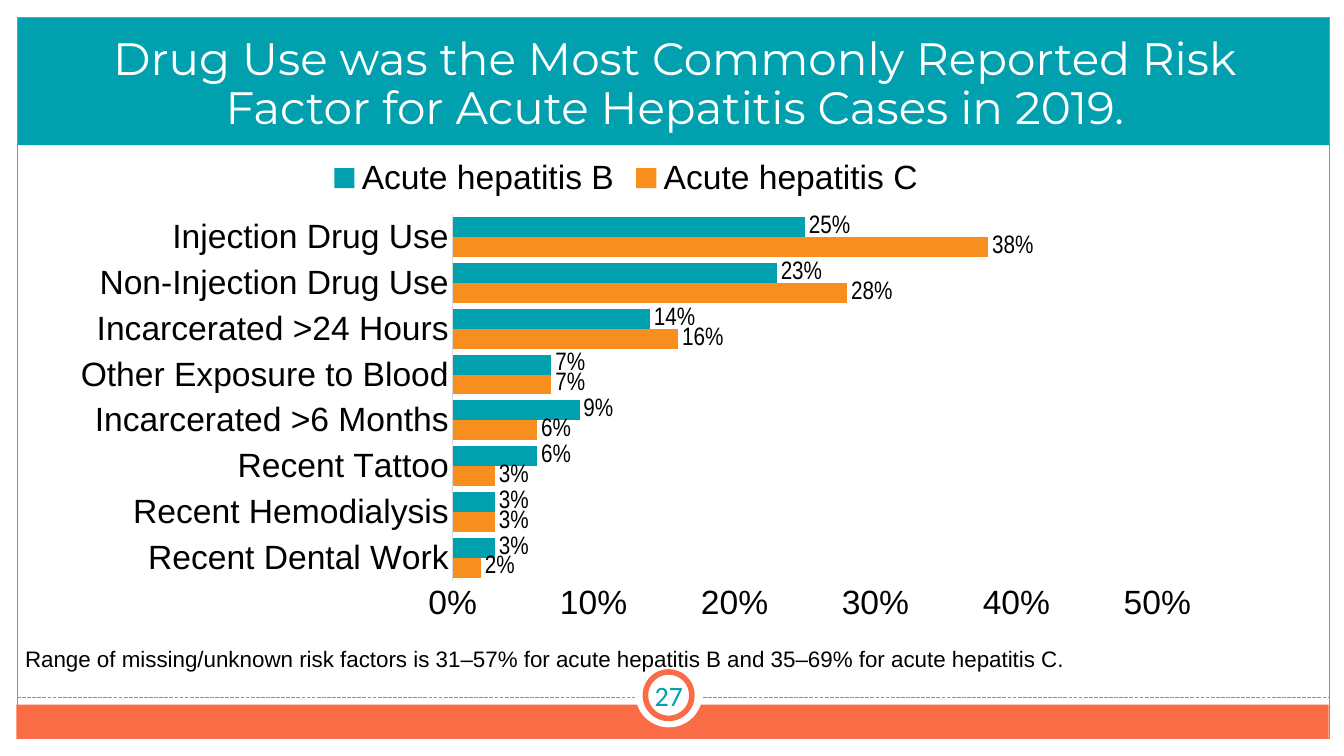
import pptx
import pptx.chart.data
import pptx.dml.color
import pptx.enum.chart
import pptx.enum.dml
import pptx.enum.shapes
import pptx.enum.text
import pptx.oxml
import pptx.oxml.ns
import pptx.util
from lxml import etree

Pt = pptx.util.Pt
SHAPE = pptx.enum.shapes.MSO_SHAPE
ANCHOR = pptx.enum.text.MSO_ANCHOR
ALIGN = pptx.enum.text.PP_ALIGN
CHART = pptx.enum.chart
TEAL, CORAL, ORANGE = "00A0AF", "F96C45", "F78E1E"
WHITE, BLACK, GREY = "FFFFFF", "000000", "D9D9D9"


def rgb(value):
    return pptx.dml.color.RGBColor.from_string(value)


def apply(target, values):
    for name, value in values.items():
        setattr(target, name, value)


class Deck:
    """Holds the presentation, its text styles and the current slide."""

    styles = {
        "title": ({"name": "Montserrat", "size": Pt(32.4)}, WHITE),
        "number": ({"name": "Calibri", "size": Pt(20)}, TEAL),
        "note": ({"name": "Arial", "size": Pt(16)}, BLACK),
        "chart": ({"name": "Calibri", "size": Pt(10)}, BLACK),
        "axis": ({"name": "Arial", "size": Pt(24)}, BLACK),
        "value": ({"name": "Arial Narrow", "size": Pt(18)}, BLACK),
    }

    def __init__(self, width, height):
        self.prs = pptx.Presentation()
        apply(self.prs, {"slide_width": Pt(width), "slide_height": Pt(height)})
        self.s = self.prs.slides.add_slide(self.prs.slide_layouts[5])

    def font(self, font, style):
        values, color = self.styles[style]
        apply(font, values)
        font.color.rgb = rgb(color)

    def shape(self, kind, box, fill=None, line=None, width=0.75):
        sp = self.s.shapes.add_shape(kind, *map(Pt, box))
        sp.shadow.inherit = False
        if fill:
            sp.fill.solid()
            sp.fill.fore_color.rgb = rgb(fill)
        else:
            sp.fill.background()
        if line:
            sp.line.color.rgb = rgb(line)
            sp.line.width = Pt(width)
        else:
            sp.line.fill.background()

    def dashed_line(self, x1, x2, y, color):
        ln = self.s.shapes.add_connector(
            pptx.enum.shapes.MSO_CONNECTOR.STRAIGHT, Pt(x1), Pt(y), Pt(x2), Pt(y))
        ln.line.color.rgb = rgb(color)
        apply(ln.line, {"width": Pt(0.9),
                        "dash_style": pptx.enum.dml.MSO_LINE.SQUARE_DOT})
        etree.SubElement(ln.element.spPr, pptx.oxml.ns.qn("a:effectLst"))

    def fill_text(self, sp, text, style, align, anchor):
        tf = sp.text_frame
        apply(tf, {"word_wrap": True, "vertical_anchor": anchor,
                   "auto_size": pptx.enum.text.MSO_AUTO_SIZE.NONE})
        p = tf.paragraphs[0]
        p.alignment = align
        r = p.add_run()
        r.text = text
        self.font(r.font, style)
        return p

    def text(self, box, text, style, align=ALIGN.LEFT, anchor=ANCHOR.TOP):
        sp = self.s.shapes.add_textbox(*map(Pt, box))
        self.fill_text(sp, text, style, align, anchor)

    def title(self, box, text):
        sp = self.s.shapes.title
        apply(sp, dict(zip(("left", "top", "width", "height"), map(Pt, box))))
        p = self.fill_text(sp, text, "title", ALIGN.CENTER, ANCHOR.MIDDLE)
        p.line_spacing = 0.9
        sp.element.getparent().append(sp.element)

    def bar_chart(self, box, cats, series, plot_area):
        data = pptx.chart.data.CategoryChartData(number_format="0%")
        data.categories = cats
        for name, _, values in series:
            data.add_series(name, values)
        chart = self.s.shapes.add_chart(
            CHART.XL_CHART_TYPE.BAR_CLUSTERED, *map(Pt, box), data).chart
        self.font(chart.font, "chart")
        apply(chart, {"has_title": False, "has_legend": True})
        apply(chart.legend, {"position": CHART.XL_LEGEND_POSITION.TOP,
                             "include_in_layout": False})
        self.font(chart.legend.font, "axis")

        plot = chart.plots[0]
        apply(plot, {"gap_width": 30, "vary_by_categories": False})
        for ser, (_, color, _) in zip(plot.series, series):
            ser.format.fill.solid()
            ser.format.fill.fore_color.rgb = rgb(color)
            labels = ser.data_labels
            apply(labels, {"show_value": True, "number_format": "0%",
                           "number_format_is_linked": False,
                           "position": CHART.XL_LABEL_POSITION.OUTSIDE_END})
            self.font(labels.font, "value")

        for axis in (chart.category_axis, chart.value_axis):
            apply(axis, {"has_major_gridlines": False,
                         "major_tick_mark": CHART.XL_TICK_MARK.NONE,
                         "minor_tick_mark": CHART.XL_TICK_MARK.NONE})
            self.font(axis.tick_labels.font, "axis")
        chart.category_axis.format.line.color.rgb = rgb(GREY)
        chart.category_axis.format.line.width = Pt(0.75)
        chart.value_axis.format.line.fill.background()
        apply(chart.value_axis, {"minimum_scale": 0, "maximum_scale": 0.5,
                                 "major_unit": 0.1})
        apply(chart.value_axis.tick_labels, {"number_format": "0%",
                                             "number_format_is_linked": False})
        self.place_plot(chart, plot_area)

    def place_plot(self, chart, plot_area):
        area = chart.element.chart.plotArea
        for old in area.findall(pptx.oxml.ns.qn("c:layout")):
            area.remove(old)
        parts = [("layoutTarget", "inner"), ("xMode", "edge"), ("yMode", "edge"),
                 *zip("xywh", plot_area)]
        inner = "".join(f'<c:{tag} val="{value}"/>' for tag, value in parts)
        area.insert(0, pptx.oxml.parse_xml(
            f'<c:layout {pptx.oxml.ns.nsdecls("c")}>'
            f"<c:manualLayout>{inner}</c:manualLayout></c:layout>"))


def main():
    deck = Deck(960, 540)
    deck.shape(SHAPE.RECTANGLE, (12.2, 13, 937.4, 90.7), fill=TEAL)
    deck.shape(SHAPE.RECTANGLE, (11.7, 503.4, 937.4, 24.5), fill=CORAL)
    deck.shape(SHAPE.RECTANGLE, (12.2, 12.2, 937.4, 515.5), line=CORAL)
    deck.dashed_line(12.2, 949, 498.2, CORAL)
    deck.shape(SHAPE.OVAL, (453.8, 471.6, 48, 48), fill=WHITE)
    deck.shape(SHAPE.OVAL, (461, 480, 33.2, 33.2), fill=WHITE, line=CORAL, width=4)
    deck.text((447.1, 479.5, 61.2, 34.6), "27", "number", ALIGN.CENTER, ANCHOR.MIDDLE)
    deck.text((10.8, 457.2, 800, 26.6),
              "Range of missing/unknown risk factors is 31–57% for acute hepatitis B "
              "and 35–69% for acute hepatitis C.", "note")
    deck.title((53.3, 18.7, 857.5, 85),
               "Drug Use was the Most Commonly Reported Risk Factor for "
               "Acute Hepatitis Cases in 2019.")
    cats = ["Recent Dental Work", "Recent Hemodialysis", "Recent Tattoo",
            "Incarcerated >6 Months", "Other Exposure to Blood",
            "Incarcerated >24 Hours", "Non-Injection Drug Use", "Injection Drug Use"]
    series = [
        ("Acute hepatitis C", ORANGE, (0.02, 0.03, 0.03, 0.06, 0.07, 0.16, 0.28, 0.38)),
        ("Acute hepatitis B", TEAL, (0.03, 0.03, 0.06, 0.09, 0.07, 0.14, 0.23, 0.25)),
    ]
    deck.bar_chart((34.6, 103.7, 825.1, 353.5), cats, series, (0.35, 0.14, 0.61, 0.74))
    deck.prs.save("out.pptx")


if __name__ == "__main__":
    main()
